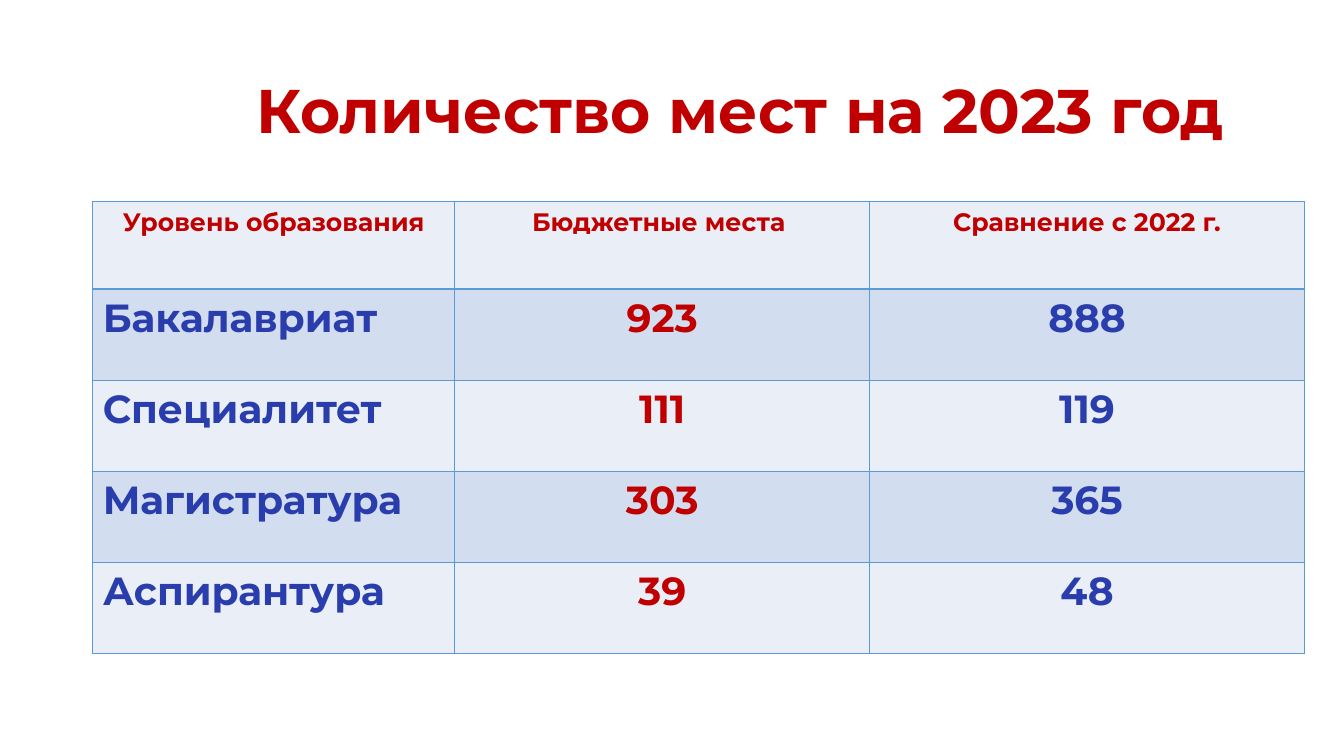
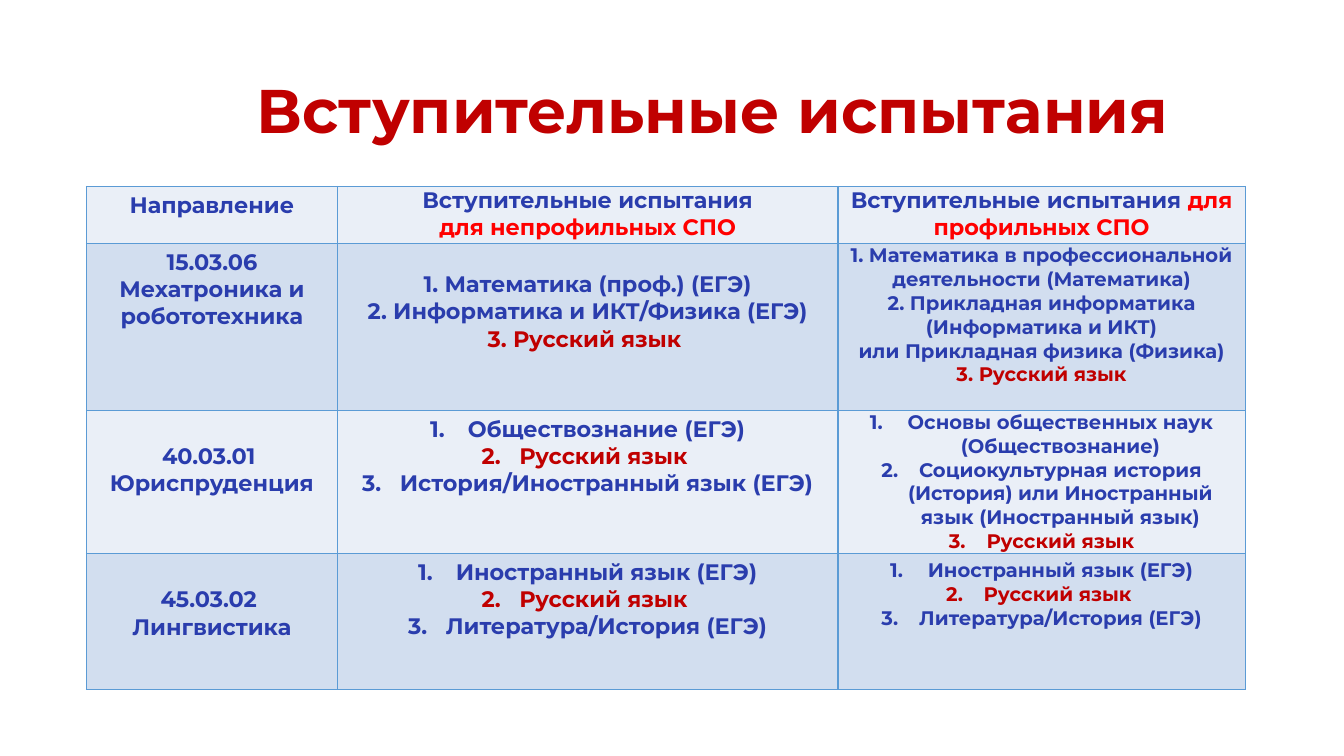
"""Build two admission slides: places for 2023 and entrance examinations."""
from dataclasses import dataclass

from lxml import etree
from pptx import Presentation
from pptx.dml.color import RGBColor
from pptx.enum.text import MSO_ANCHOR, PP_ALIGN
from pptx.oxml.ns import qn
from pptx.util import Cm, Length, Pt

CENTER = PP_ALIGN.CENTER
LEFT = PP_ALIGN.LEFT
MIDDLE = MSO_ANCHOR.MIDDLE


@dataclass(frozen=True)
class Theme:
    """Colours, font and type sizes shared by the slides."""
    font: str = "Montserrat"
    red: str = "C00000"
    bright_red: str = "FF0000"
    blue: str = "2A3DAD"
    border: str = "5B9BD5"
    bands: tuple[str, str] = ("EAEFF7", "D2DEEF")
    title_size: int = 44
    figure_size: int = 28
    header_size: int = 18
    body_size: int = 16
    small_size: int = 14


THEME = Theme()


@dataclass(frozen=True)
class Insets:
    """Cell margins."""
    side: Length = Cm(0.25)
    top: Length = Cm(0.13)
    bottom: Length = Cm(0.13)


NORMAL = Insets()
LOWERED = Insets(top=Cm(0.82))
TIGHT = Insets(Cm(0.3), Cm(0), Cm(0))
TIGHT_LOWERED = Insets(Cm(0.3), Cm(0.69), Cm(0))
HANGING = Cm(0.95)


@dataclass(frozen=True)
class Line:
    """One paragraph, with an optional tail in bright red."""
    text: str
    color: str = THEME.blue
    tail: str = ""


@dataclass(frozen=True)
class Entry:
    """Content of one table cell."""
    lines: tuple[Line, ...]
    size: int = THEME.body_size
    insets: Insets = NORMAL
    align: PP_ALIGN = CENTER
    numbered: bool = False
    hanging: Length = Cm(0)


@dataclass(frozen=True)
class TablePage:
    """A titled slide with one table."""
    title: str
    left: Length
    top: Length
    widths: tuple[float, ...]
    heights: tuple[float, ...]
    rows: list[list[Entry]]


def heading(text: str) -> Entry:
    """Return a column heading for the places table."""
    return Entry((Line(text, THEME.red),), THEME.header_size)


def places_row(level: str, current: int, previous: int) -> list[Entry]:
    """Return one row of the places table."""
    size = THEME.figure_size
    return [Entry((Line(level),), size, align=LEFT),
            Entry((Line(str(current), THEME.red),), size),
            Entry((Line(str(previous)),), size)]


def programme(code: str, name: str, insets: Insets = LOWERED) -> Entry:
    """Return the cell naming a study programme."""
    return Entry((Line(code), Line(name)), insets=insets)


def exams(*names: str, size: int = THEME.body_size, insets: Insets = NORMAL,
          numbered: bool = True, hanging: Length = HANGING) -> Entry:
    """Return a list of exams with the Russian language in red."""
    lines = tuple(Line(name, THEME.red if "Русский язык" in name else THEME.blue)
                  for name in names)
    return Entry(lines, size, insets, numbered=numbered, hanging=hanging)


PAGES = (
    TablePage(
        "Количество мест на 2023 год", Cm(2.34), Cm(5.08),
        (9.12, 10.46, 10.95), (2.2, 2.3, 2.3, 2.3, 2.3),
        [
            [heading("Уровень образования"), heading("Бюджетные места "),
             heading("Сравнение с 2022 г.")],
            places_row("Бакалавриат", 923, 888),
            places_row("Специалитет", 111, 119),
            places_row("Магистратура", 303, 365),
            places_row("Аспирантура", 39, 48),
        ],
    ),
    TablePage(
        "Вступительные испытания", Cm(2.18), Cm(4.7),
        (6.32, 12.62, 10.26), (1.44, 4.2, 3.61, 3.43),
        [
            [Entry((Line("Направление"),)),
             Entry((Line("Вступительные испытания"),
                    Line("для непрофильных СПО", THEME.bright_red)), insets=TIGHT),
             Entry((Line("Вступительные испытания ", tail="для профильных СПО"),),
                   insets=TIGHT)],
            [programme("15.03.06", "Мехатроника и робототехника", NORMAL),
             exams(" Математика (проф.) (ЕГЭ)", " Информатика и ИКТ/Физика (ЕГЭ)",
                   " Русский язык ", insets=TIGHT_LOWERED, hanging=Cm(0)),
             exams("1. Математика в профессиональной деятельности (Математика)",
                   "2. Прикладная информатика (Информатика и ИКТ)",
                   "или Прикладная физика (Физика)", "3. Русский язык",
                   size=THEME.small_size, insets=TIGHT, numbered=False)],
            [programme("40.03.01 ", "Юриспруденция"),
             exams("Обществознание (ЕГЭ)", "Русский язык ",
                   "История/Иностранный язык (ЕГЭ)"),
             exams("Основы общественных наук (Обществознание)",
                   "Социокультурная история (История) или Иностранный язык "
                   "(Иностранный язык)", "Русский язык",
                   size=THEME.small_size, insets=TIGHT)],
            [programme("45.03.02 ", "Лингвистика"),
             exams("Иностранный язык (ЕГЭ)", "Русский язык ",
                   "Литература/История (ЕГЭ)"),
             exams("Иностранный язык (ЕГЭ)", "Русский язык ",
                   "Литература/История (ЕГЭ)", size=THEME.small_size)],
        ],
    ),
)


def style_span(span, size: int, color: str) -> None:
    """Apply the bold theme font to a run."""
    span.font.name = THEME.font
    span.font.size = Pt(size)
    span.font.bold = True
    span.font.color.rgb = RGBColor.from_string(color)


def number_para(para, hanging: Length) -> None:
    """Turn on automatic numbering for a paragraph."""
    properties = para._p.get_or_add_pPr()
    properties.set("marL", str(int(hanging)))
    properties.set("indent", str(-int(hanging)))
    etree.SubElement(properties, qn("a:buAutoNum"), type="arabicPeriod")


def border_cell(cell) -> None:
    """Draw a thin line on each side of a cell."""
    properties = cell._tc.get_or_add_tcPr()
    for position, side in enumerate(("a:lnL", "a:lnR", "a:lnT", "a:lnB")):
        line = etree.Element(qn(side), w=str(int(Pt(1))))
        fill = etree.SubElement(line, qn("a:solidFill"))
        etree.SubElement(fill, qn("a:srgbClr"), val=THEME.border)
        properties.insert(position, line)


def fill_cell(cell, entry: Entry, band: str) -> None:
    """Write and style one cell."""
    cell.margin_left = cell.margin_right = entry.insets.side
    cell.margin_top = entry.insets.top
    cell.margin_bottom = entry.insets.bottom
    cell.fill.solid()
    cell.fill.fore_color.rgb = RGBColor.from_string(band)
    border_cell(cell)
    cell.text_frame.text = "\n".join(line.text for line in entry.lines)
    for para, line in zip(cell.text_frame.paragraphs, entry.lines):
        para.alignment = entry.align
        if entry.numbered:
            number_para(para, entry.hanging)
        style_span(para.runs[0], entry.size, line.color)
        if line.tail:
            tail = para.add_run()
            tail.text = line.tail
            style_span(tail, entry.size, THEME.bright_red)


def add_title(page, text: str) -> None:
    """Add the slide title."""
    box = page.shapes.add_textbox(Cm(6.22), Cm(1.02), Cm(25.3), Cm(3.68))
    frame = box.text_frame
    frame.word_wrap = True
    frame.vertical_anchor = MIDDLE
    frame.text = text
    para = frame.paragraphs[0]
    para.line_spacing = 0.9
    style_span(para.runs[0], THEME.title_size, THEME.red)


def add_table(page, content: TablePage) -> None:
    """Add the table of a slide."""
    table = page.shapes.add_table(
        len(content.heights), len(content.widths), content.left, content.top,
        Cm(sum(content.widths)), Cm(sum(content.heights))).table
    for column, width in zip(table.columns, content.widths):
        column.width = Cm(width)
    for index, (row, height) in enumerate(zip(table.rows, content.heights)):
        row.height = Cm(height)
        for cell, entry in zip(row.cells, content.rows[index]):
            fill_cell(cell, entry, THEME.bands[index % 2])


def main() -> None:
    """Build and save the deck."""
    deck = Presentation()
    deck.slide_width, deck.slide_height = Cm(33.87), Cm(19.05)
    for content in PAGES:
        page = deck.slides.add_slide(deck.slide_layouts[6])
        add_title(page, content.title)
        add_table(page, content)
    deck.save("out.pptx")


if __name__ == "__main__":
    main()
